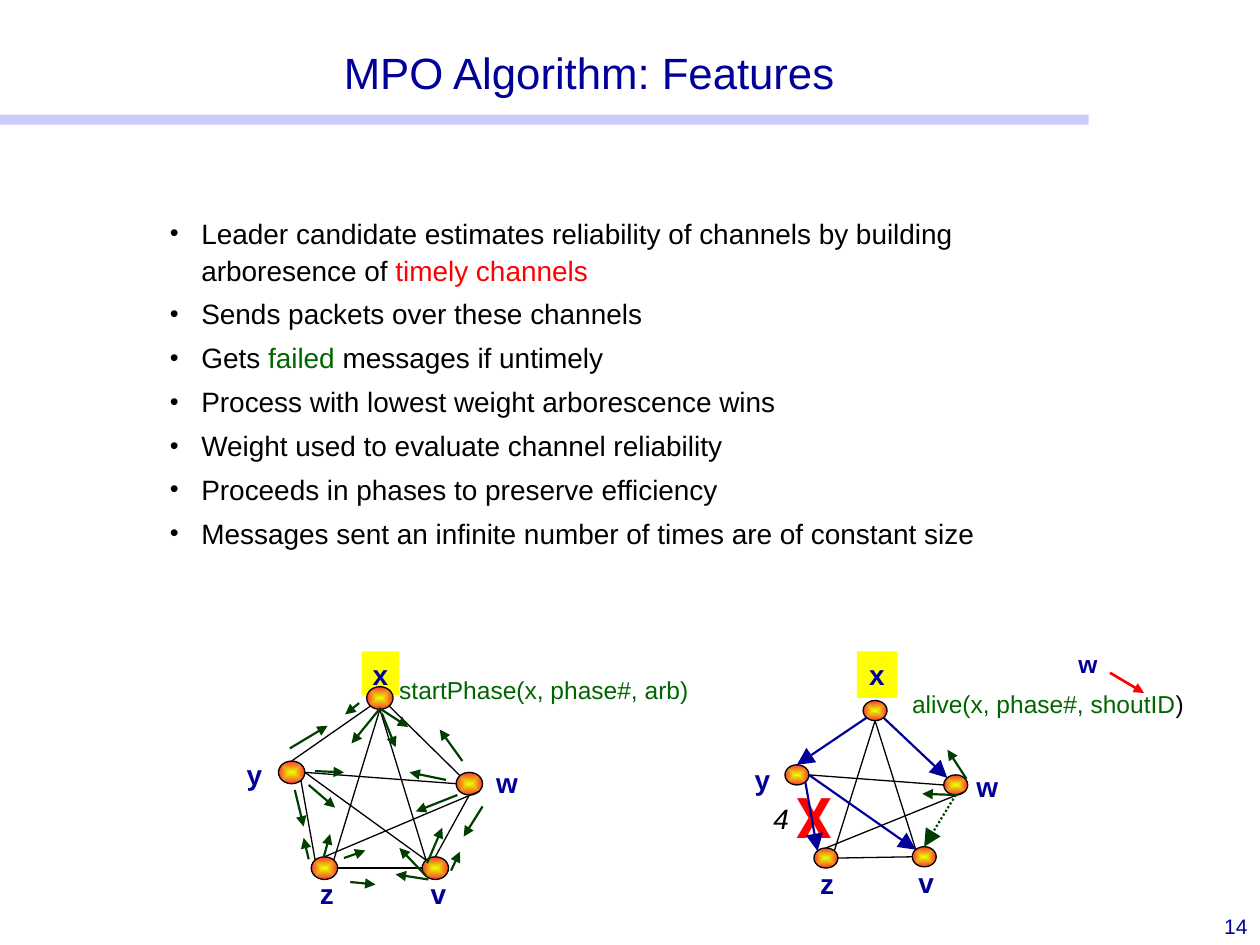
from dataclasses import dataclass
from typing import NamedTuple

from lxml.etree import SubElement
from pptx import Presentation
from pptx.dml.color import RGBColor as RGB
from pptx.enum.dml import MSO_LINE as Dash
from pptx.enum.shapes import MSO_CONNECTOR as Conn, MSO_SHAPE as Form
from pptx.enum.text import MSO_ANCHOR as Anchor, PP_ALIGN as Align
from pptx.oxml import parse_xml
from pptx.oxml.ns import nsdecls, qn
from pptx.util import Inches, Pt

NAVY = RGB(0x00, 0x00, 0x99)
BLACK = RGB(0x00, 0x00, 0x00)
RED = RGB(0xFF, 0x00, 0x00)
GREEN = RGB(0x00, 0x66, 0x00)
DARK = RGB(0x00, 0x3E, 0x00)
YELLOW = RGB(0xFF, 0xFF, 0x00)
LILAC = RGB(0xCC, 0xCC, 0xFF)

COLS = 1000  # the grid has 1000 columns and 750 square rows
GLOW = f"""<a:gradFill {nsdecls('a')} rotWithShape="1"><a:gsLst>
<a:gs pos="0"><a:srgbClr val="E6FF00"/></a:gs>
<a:gs pos="100000"><a:srgbClr val="FF3333"/></a:gs></a:gsLst>
<a:path path="shape"><a:fillToRect l="50000" t="50000" r="50000" b="50000"/></a:path>
</a:gradFill>"""

deck = Presentation()
deck.slide_width, deck.slide_height = Inches(10), Inches(7.5)
UNIT = deck.slide_width // COLS
slide = deck.slides.add_slide(deck.slide_layouts[5])
shapes = slide.shapes


class Box(NamedTuple):
    col: float
    row: float
    wide: float
    high: float

    def emu(self) -> list[int]:
        return [round(n * UNIT) for n in self]

    def port(self, name: str) -> tuple[float, float]:
        """Point on the rim of the ellipse, named by compass direction."""
        x, y = PORTS[name]
        return self.col + x * self.wide, self.row + y * self.high


NEAR, FAR = 0.15, 0.85
PORTS = {"N": (0.5, 0), "NW": (NEAR, NEAR), "W": (0, 0.5), "SW": (NEAR, FAR),
         "S": (0.5, 1), "SE": (FAR, FAR), "E": (1, 0.5), "NE": (FAR, NEAR)}


class Pen(NamedTuple):
    color: RGB = BLACK
    width: float = 0.75
    head: str = ""
    dash: Dash | None = None


THIN = Pen()
HINT = Pen(DARK, 1.25, "med")
TREE = Pen(NAVY, 1.25, "lg")
DOTS = Pen(DARK, 1.25, "lg", Dash.ROUND_DOT)


@dataclass
class Graph:
    nodes: dict[str, tuple[float, float]]
    size: tuple[float, float]
    labels: dict[str, Box]
    pens: dict[str, Pen]
    hints: list[tuple[float, float, float, float]]


EDGES = ["w.SE z.N", "x.SW y.N", "x.S z.NE", "y.SE z.NW", "x.SE w.NW",
         "y.E w.W", "y.E v.NW", "w.S v.N", "z.E v.W", "x.S v.NW"]


def write(shape, *lines, size=16, color=BLACK, font="Arial", bold=False,
          italic=False, align=Align.LEFT, wrap=True, anchor=Anchor.TOP,
          lead=None, gap=0, bullet=False):
    """Each line is a string or a list of (text, colour) runs."""
    frame = shape.text_frame
    frame.word_wrap, frame.vertical_anchor = wrap, anchor
    for i, line in enumerate(lines):
        para = frame.add_paragraph() if i else frame.paragraphs[0]
        para.alignment, para.line_spacing = align, lead
        para.space_before = Pt(gap if i else 0)
        if bullet:
            props = para._p.get_or_add_pPr()
            props.set("marL", str(Inches(0.25)))
            props.set("indent", str(-Inches(0.25)))
            SubElement(props, qn("a:buSzPct"), val="90000")
            SubElement(props, qn("a:buFont"), typeface="Arial")
            SubElement(props, qn("a:buChar"), char="•")
        for words, tint in [(line, color)] if isinstance(line, str) else line:
            run = para.add_run()
            run.text = words
            face = run.font
            face.name, face.size = font, Pt(size)
            face.bold, face.italic = bold, italic
            face.color.rgb = tint


def note(box: Box, *lines, **style):
    write(shapes.add_textbox(*box.emu()), *lines, **style)


def block(box: Box, color: RGB):
    shape = shapes.add_shape(Form.RECTANGLE, *box.emu())
    shape.shadow.inherit = False
    shape.fill.solid()
    shape.fill.fore_color.rgb = color
    shape.line.fill.background()
    return shape


def node(box: Box):
    ball = shapes.add_shape(Form.OVAL, *box.emu())
    ball.shadow.inherit = False
    ball.line.color.rgb, ball.line.width = BLACK, Pt(0.75)
    ball._element.spPr.find(qn("a:prstGeom")).addnext(parse_xml(GLOW))


def link(start, end, pen: Pen):
    ends = [round(n * UNIT) for n in (*start, *end)]
    wire = shapes.add_connector(Conn.STRAIGHT, *ends)
    wire.line.color.rgb, wire.line.width = pen.color, Pt(pen.width)
    if pen.dash:
        wire.line.dash_style = pen.dash
    if pen.head:
        SubElement(wire.line._get_or_add_ln(), qn("a:tailEnd"),
                   type="triangle", w=pen.head, len=pen.head)
    SubElement(wire._element.spPr, qn("a:effectLst"))


def draw(graph: Graph):
    for name, box in graph.labels.items():
        style = dict(color=NAVY, bold=True, align=Align.CENTER, wrap=False)
        if name == "x":
            write(block(box, YELLOW), name, **style)
        else:
            note(box, name, **style)
    balls = {name: Box(*spot, *graph.size) for name, spot in graph.nodes.items()}
    for ball in balls.values():
        node(ball)
    for edge in EDGES:
        start, end = (balls[name].port(side) for name, side in
                      (tip.split(".") for tip in edge.split()))
        link(start, end, graph.pens.get(edge, THIN))
    for a, b, c, d in graph.hints:
        link((a, b), (c, d), HINT)


LEFT = Graph(
    nodes=dict(y=(221, 604), z=(247, 680), w=(362, 613), x=(291, 545), v=(335, 680)),
    size=(21, 18),
    labels=dict(y=Box(186, 596, 30, 35), z=Box(244, 691, 29, 35),
                w=Box(384, 603, 34, 35), x=Box(287, 517, 30, 35),
                v=Box(332, 691, 30, 35)),
    pens={},
    hints=[(245, 682, 241, 665), (257, 680, 262, 662), (273, 681, 290, 675),
           (278, 700, 298, 702), (383, 640, 368, 664), (363, 631, 330, 644),
           (354, 619, 325, 613), (367, 604, 349, 579), (230, 594, 260, 576),
           (245, 623, 266, 641), (250, 612, 273, 613), (234, 627, 241, 656),
           (340, 698, 314, 694), (338, 695, 317, 673), (339, 685, 351, 657),
           (358, 691, 365, 676), (301, 562, 324, 577), (303, 566, 314, 593),
           (301, 563, 279, 590), (285, 558, 274, 567)])

RIGHT = Graph(
    nodes=dict(y=(623, 607), z=(646, 673), w=(749, 615), x=(685, 556), v=(724, 672)),
    size=(19, 16),
    labels=dict(y=Box(589, 600, 32, 37), z=Box(641, 683, 31, 37),
                w=Box(765, 606, 37, 37), x=Box(680, 517, 32, 37),
                v=Box(719, 682, 32, 37)),
    pens={**dict.fromkeys(["x.SW y.N", "y.SE z.NW", "x.SE w.NW", "y.E v.NW"], TREE),
          "w.S v.N": DOTS},
    hints=[(760, 631, 732, 630), (767, 618, 752, 595)])

block(Box(0, 91, 864, 8), LILAC)
title = shapes.title
title.left, title.top, title.width, title.height = Box(110, 30, 715, 53).emu()
write(title, "MPO Algorithm: Features", size=25, color=NAVY, lead=1.1,
      align=Align.CENTER, anchor=Anchor.BOTTOM)
note(Box(950, 720, 50, 30), "14", size=12, color=NAVY, align=Align.RIGHT)
note(Box(125, 164, 744, 310),
     [("Leader candidate estimates reliability of channels by building "
       "arboresence of ", BLACK), ("timely channels", RED)],
     "Sends packets over these channels",
     [("Gets ", BLACK), ("failed", GREEN), (" messages if untimely", BLACK)],
     "Process with lowest weight arborescence wins",
     "Weight used to evaluate channel reliability",
     "Proceeds in phases to preserve efficiency",
     "Messages sent an infinite number of times are of constant size",
     lead=1.1, gap=4, bullet=True)

note(Box(622, 616, 42, 56), "X", size=32, color=RED, font="Roboto", bold=True,
     align=Align.CENTER, wrap=False)
note(Box(714, 542, 260, 31),
     [("alive(x, phase#, shoutID", GREEN), (")", BLACK)], size=14)
note(Box(599, 631, 42, 33), "4", italic=True, align=Align.CENTER)
note(Box(846, 510, 34, 31), "w", size=14, color=NAVY, bold=True, wrap=False)
link((881, 534), (908, 550), Pen(RED, 1.5, "med"))
draw(RIGHT)
note(Box(307, 531, 251, 31), "startPhase(x, phase#, arb)", size=14, color=GREEN,
     wrap=False)
draw(LEFT)

deck.save("out.pptx")
